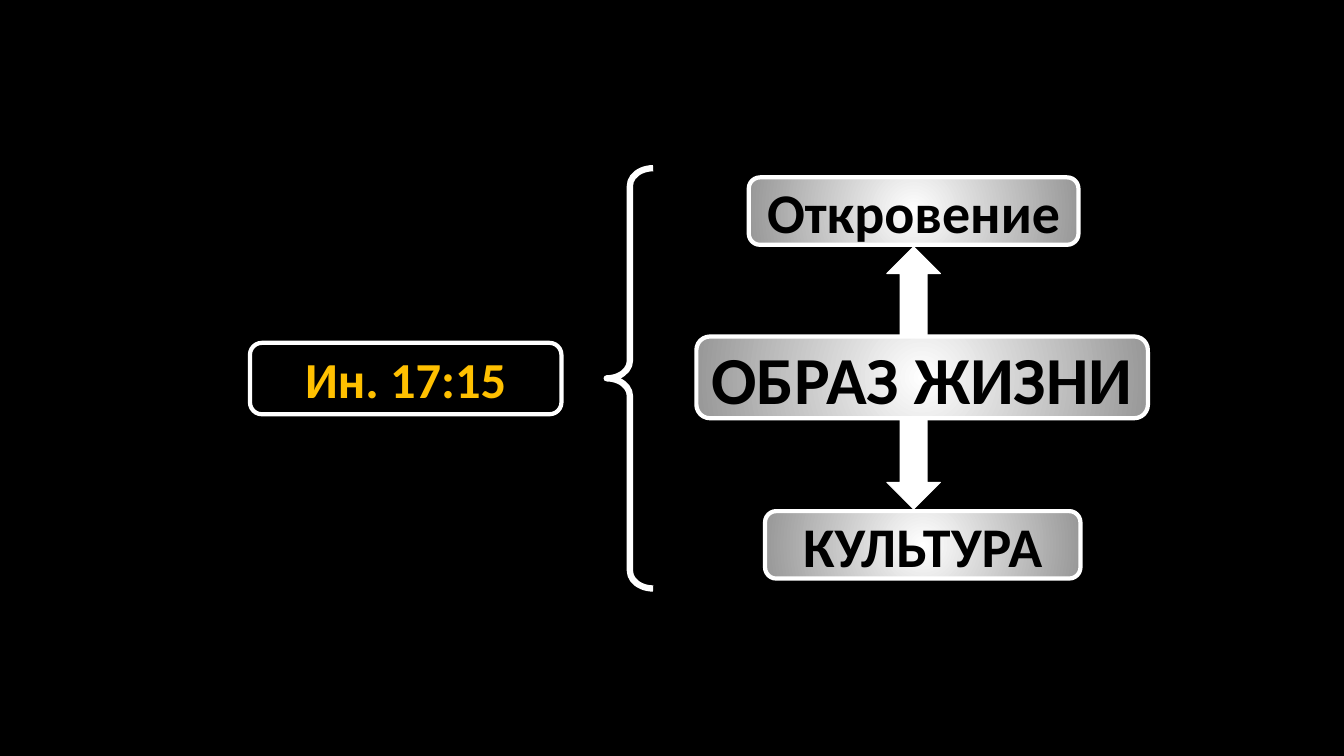
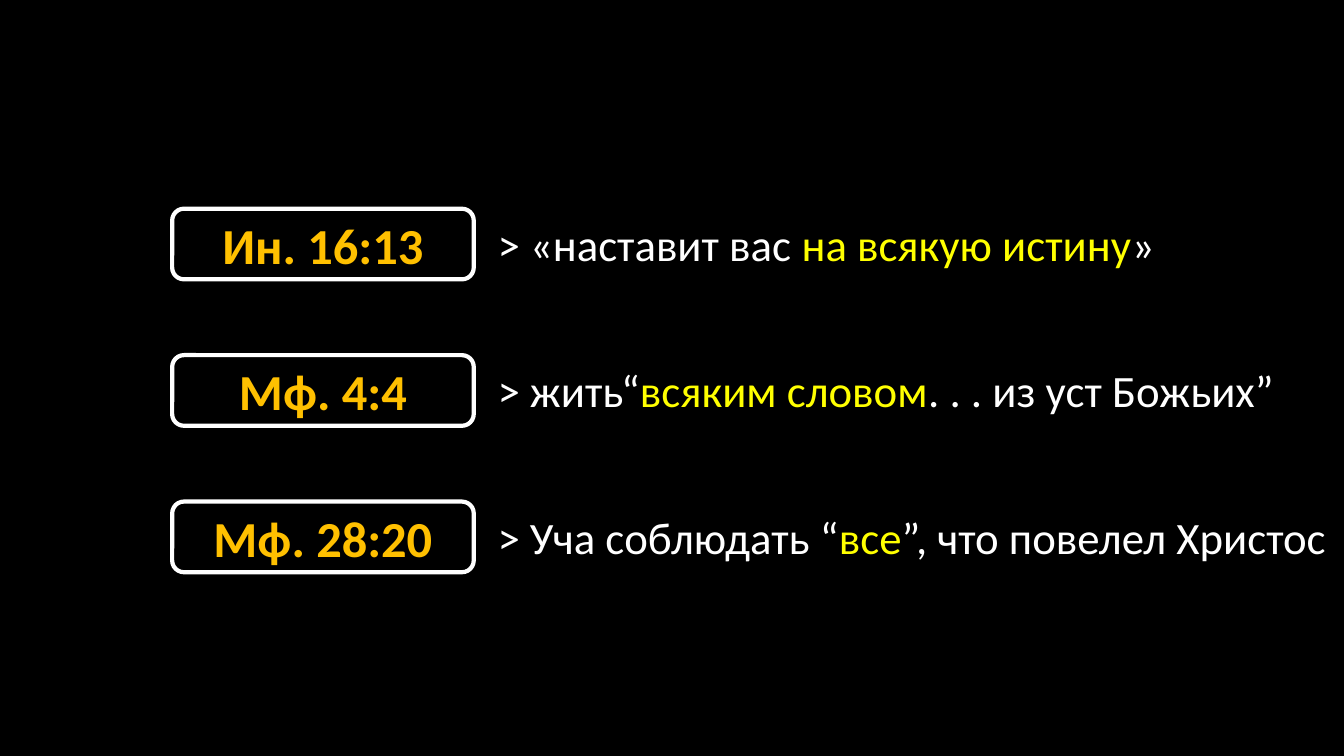
from dataclasses import dataclass

from lxml.etree import SubElement
from pptx import Presentation
from pptx.dml.color import RGBColor
from pptx.enum.shapes import MSO_SHAPE as Preset
from pptx.enum.text import MSO_ANCHOR as Anchor, MSO_AUTO_SIZE as AutoSize, PP_ALIGN as Align
from pptx.oxml.ns import qn
from pptx.presentation import Presentation as Deck
from pptx.shapes.autoshape import Shape
from pptx.slide import Slide
from pptx.text.text import _Paragraph as Paragraph
from pptx.util import Cm, Pt


@dataclass(frozen=True)
class Theme:
    font: str = "Calibri"
    black: RGBColor = RGBColor(0x00, 0x00, 0x00)
    white: RGBColor = RGBColor(0xFF, 0xFF, 0xFF)
    grey: RGBColor = RGBColor(0x97, 0x97, 0x97)
    gold: RGBColor = RGBColor(0xFF, 0xC0, 0x00)
    yellow: RGBColor = RGBColor(0xFF, 0xFF, 0x00)
    main_size: int = 48
    concept_size: int = 40
    reference_size: int = 36
    quote_size: int = 32
    arrow_line: float = 0.75
    box_line: float = 3
    brace_line: float = 4.5


THEME = Theme()


@dataclass(frozen=True)
class Frame:
    """A place on the slide, in centimetres."""
    left: float
    top: float
    width: float
    height: float

    def lengths(self) -> tuple[Cm, Cm, Cm, Cm]:
        return Cm(self.left), Cm(self.top), Cm(self.width), Cm(self.height)


@dataclass(frozen=True)
class Concept:
    text: str
    frame: Frame
    size: int = THEME.concept_size


@dataclass(frozen=True)
class Verse:
    reference: str
    before: str
    stressed: str
    after: str
    width: float


CONCEPTS = (
    Concept("Откровение", Frame(18.87, 4.47, 8.31, 1.7)),
    Concept("КУЛЬТУРА", Frame(19.28, 12.88, 7.95, 1.7)),
    Concept("ОБРАЗ ЖИЗНИ", Frame(17.55, 8.48, 11.38, 2.06), THEME.main_size),
)
ARROWS = (
    (Preset.UP_ARROW, Frame(22.35, 6.22, 1.35, 2.59)),
    (Preset.DOWN_ARROW, Frame(22.35, 10.24, 1.35, 2.59)),
)
VERSES = (
    Verse("Ин. 16:13", "> «наставит вас ", "на всякую истину", "»", 17.48),
    Verse("Мф. 4:4", "> жить“", "всяким словом", ". . . из уст Божьих”", 20.62),
    Verse("Мф. 28:20", "> Уча соблюдать “", "все", "”, что повелел Христос", 21.56),
)
FIRST_VERSE_TOP = 5.26
VERSE_PITCH = 3.69


def add_span(para: Paragraph, text: str, size: int, color: RGBColor, bold: bool = False) -> None:
    span = para.add_run()
    span.text = text
    span.font.name = THEME.font
    span.font.size = Pt(size)
    span.font.bold = bold
    span.font.color.rgb = color


def add_outlined(page: Slide, preset: Preset, frame: Frame, line_width: float) -> Shape:
    shape = page.shapes.add_shape(preset, *frame.lengths())
    shape.shadow.inherit = False
    shape.line.color.rgb = THEME.white
    shape.line.width = Pt(line_width)
    return shape


def fill_solid(shape: Shape, color: RGBColor) -> None:
    shape.fill.solid()
    shape.fill.fore_color.rgb = color


def fill_glow(shape: Shape) -> None:
    """Fill with a circular gradient, white in the centre and grey outside."""
    shape.fill.gradient()
    for stop, color in zip(shape.fill.gradient_stops, (THEME.white, THEME.grey)):
        stop.color.rgb = color
    gradient = shape._element.spPr.find(qn("a:gradFill"))
    gradient.remove(gradient.find(qn("a:lin")))
    circle = SubElement(gradient, qn("a:path"), {"path": "circle"})
    SubElement(circle, qn("a:fillToRect"), dict.fromkeys("ltrb", "50000"))


def add_label_box(page: Slide, frame: Frame, text: str, size: int, color: RGBColor) -> Shape:
    box = add_outlined(page, Preset.ROUNDED_RECTANGLE, frame, THEME.box_line)
    box.text_frame.word_wrap = False
    box.text_frame.vertical_anchor = Anchor.MIDDLE
    para = box.text_frame.paragraphs[0]
    para.alignment = Align.CENTER
    add_span(para, text, size, color, bold=True)
    return box


def add_concept(page: Slide, concept: Concept) -> None:
    box = add_label_box(page, concept.frame, concept.text, concept.size, THEME.black)
    fill_glow(box)


def add_reference(page: Slide, frame: Frame, text: str) -> None:
    box = add_label_box(page, frame, text, THEME.reference_size, THEME.gold)
    fill_solid(box, THEME.black)


def add_quote(page: Slide, verse: Verse, top: float) -> None:
    box = page.shapes.add_textbox(*Frame(12.29, top, verse.width, 1.63).lengths())
    box.text_frame.word_wrap = True
    box.text_frame.auto_size = AutoSize.SHAPE_TO_FIT_TEXT
    para = box.text_frame.paragraphs[0]
    add_span(para, verse.before, THEME.quote_size, THEME.white)
    add_span(para, verse.stressed, THEME.quote_size, THEME.yellow)
    add_span(para, verse.after, THEME.quote_size, THEME.white)


def add_page(deck: Deck) -> Slide:
    return deck.slides.add_slide(deck.slide_layouts.get_by_name("Blank"))


def build_lifestyle(deck: Deck) -> None:
    page = add_page(deck)
    for preset, frame in ARROWS:
        fill_solid(add_outlined(page, preset, frame, THEME.arrow_line), THEME.white)
    for concept in CONCEPTS:
        add_concept(page, concept)
    brace = add_outlined(page, Preset.LEFT_BRACE, Frame(15.29, 4.24, 1.17, 10.59), THEME.brace_line)
    brace.fill.background()
    brace.adjustments[0] = 0.38
    add_reference(page, Frame(6.3, 8.64, 7.85, 1.8), "Ин. 17:15")


def build_verses(deck: Deck) -> None:
    page = add_page(deck)
    for row, verse in enumerate(VERSES):
        top = FIRST_VERSE_TOP + row * VERSE_PITCH
        add_quote(page, verse, top + 0.07)
        add_reference(page, Frame(4.34, top, 7.6, 1.78), verse.reference)


def main() -> None:
    deck = Presentation()
    deck.slide_width, deck.slide_height = Cm(33.87), Cm(19.05)
    backdrop = deck.slide_master.background.fill
    backdrop.solid()
    backdrop.fore_color.rgb = THEME.black
    build_lifestyle(deck)
    build_verses(deck)
    deck.save("out.pptx")


if __name__ == "__main__":
    main()
